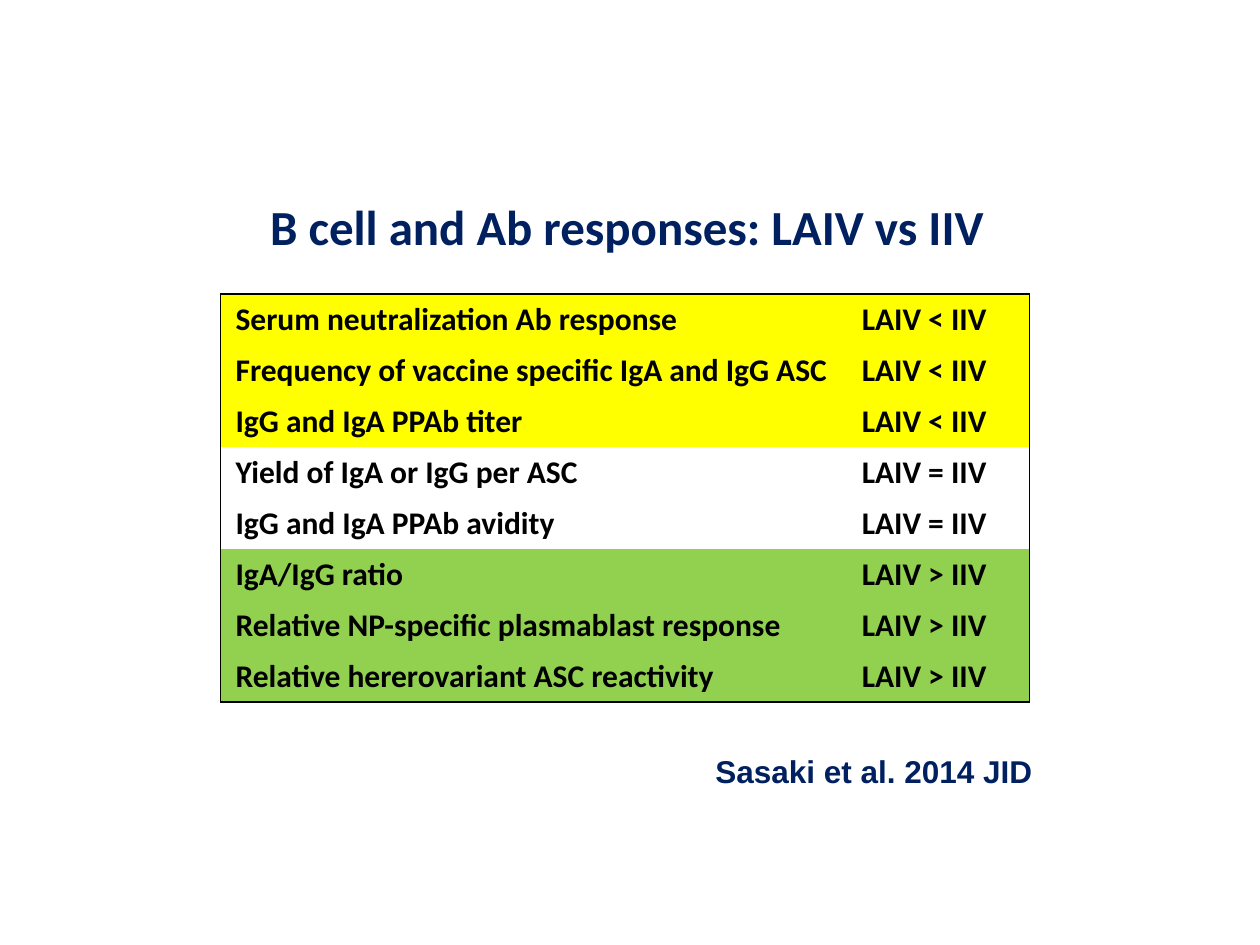
from typing import NamedTuple, Optional

from lxml import etree
from pptx import Presentation
from pptx.dml.color import RGBColor
from pptx.enum.text import MSO_ANCHOR, MSO_AUTO_SIZE, PP_ALIGN
from pptx.oxml.ns import qn
from pptx.util import Inches, Pt

LEFT, CENTER = PP_ALIGN.LEFT, PP_ALIGN.CENTER
MIDDLE = MSO_ANCHOR.MIDDLE
GROW = MSO_AUTO_SIZE.SHAPE_TO_FIT_TEXT

NAVY = RGBColor(0x00, 0x20, 0x60)
BLACK = RGBColor(0x00, 0x00, 0x00)
YELLOW = RGBColor(0xFF, 0xFF, 0x00)
GREEN = RGBColor(0x92, 0xD0, 0x50)

WIDTH, HEIGHT = Inches(10), Inches(7.5)
COLS = (Inches(5.08), Inches(1.34))
ROW = Inches(0.405)
INDENT, PAD = Inches(0.12), Inches(0.01)


class Label(NamedTuple):
    text: str
    left: float  # shares of the slide's size
    top: float
    width: float
    height: float
    size: int
    font: str
    align: PP_ALIGN


class Group(NamedTuple):
    """Findings that share one outcome and one fill."""
    result: str
    fill: Optional[RGBColor]
    topics: tuple[str, ...]


LABELS = (
    Label("B cell and Ab responses: LAIV vs IIV",
          0.201, 0.201, 0.593, 0.076, 28, "Calibri", CENTER),
    Label("Sasaki et al. 2014 JID",
          0.558, 0.789, 0.274, 0.053, 18, "Arial", LEFT),
)
GROUPS = (
    Group("LAIV < IIV", YELLOW, (
        "Serum neutralization Ab response",
        "Frequency of vaccine specific IgA and IgG ASC",
        "IgG and IgA PPAb titer")),
    Group("LAIV = IIV", None, (
        "Yield of IgA or IgG per ASC",
        "IgG and IgA PPAb avidity")),
    Group("LAIV > IIV", GREEN, (
        "IgA/IgG ratio",
        "Relative NP-specific plasmablast response",
        "Relative hererovariant ASC reactivity")),
)


def style(para, size: int, name: str, color: RGBColor) -> None:
    font = para.font
    font.size, font.name, font.bold = Pt(size), name, True
    font.color.rgb = color


def add_label(slide, label: Label) -> None:
    box = slide.shapes.add_textbox(
        int(WIDTH * label.left), int(HEIGHT * label.top),
        int(WIDTH * label.width), int(HEIGHT * label.height))
    frame = box.text_frame
    frame.word_wrap = False
    frame.auto_size = GROW
    para = frame.paragraphs[0]
    para.text, para.alignment = label.text, label.align
    style(para, label.size, label.font, NAVY)


def set_edges(cell, shown: dict[str, bool]) -> None:
    """Draw the shown sides in black and clear the others."""
    props = cell._tc.get_or_add_tcPr()
    for spot, side in enumerate("LRTB"):
        line = etree.Element(qn(f"a:ln{side}"), w=str(Pt(1)))
        if shown[side]:
            fill = etree.SubElement(line, qn("a:solidFill"))
            etree.SubElement(fill, qn("a:srgbClr"), val=str(BLACK))
        else:
            etree.SubElement(line, qn("a:noFill"))
        props.insert(spot, line)


def fill_cell(cell, text: str, color: Optional[RGBColor], indent: int) -> None:
    cell.margin_left, cell.margin_right = indent, PAD
    cell.margin_top, cell.margin_bottom = PAD, 0
    cell.vertical_anchor = MIDDLE
    para = cell.text_frame.paragraphs[0]
    para.text = text
    style(para, 18, "Calibri", BLACK)
    if color is None:
        cell.fill.background()
    else:
        cell.fill.solid()
        cell.fill.fore_color.rgb = color


def add_findings(slide) -> None:
    rows = [(topic, group) for group in GROUPS for topic in group.topics]
    count = len(rows)
    table = slide.shapes.add_table(
        count, len(COLS), int(WIDTH * 0.175), int(HEIGHT * 0.311),
        sum(COLS), ROW * count).table
    table.first_row = table.horz_banding = False
    for col, width in zip(table.columns, COLS):
        col.width = width
    for r, (topic, group) in enumerate(rows):
        table.rows[r].height = ROW
        for c, (text, indent) in enumerate(((topic, INDENT), (group.result, PAD))):
            cell = table.cell(r, c)
            fill_cell(cell, text, group.fill, indent)
            set_edges(cell, {"L": c == 0, "R": c == len(COLS) - 1,
                             "T": r == 0, "B": r == count - 1})


def main() -> None:
    deck = Presentation()
    deck.slide_width, deck.slide_height = WIDTH, HEIGHT
    slide = deck.slides.add_slide(deck.slide_layouts[6])
    add_findings(slide)
    for label in LABELS:
        add_label(slide, label)
    deck.save("out.pptx")


if __name__ == "__main__":
    main()
